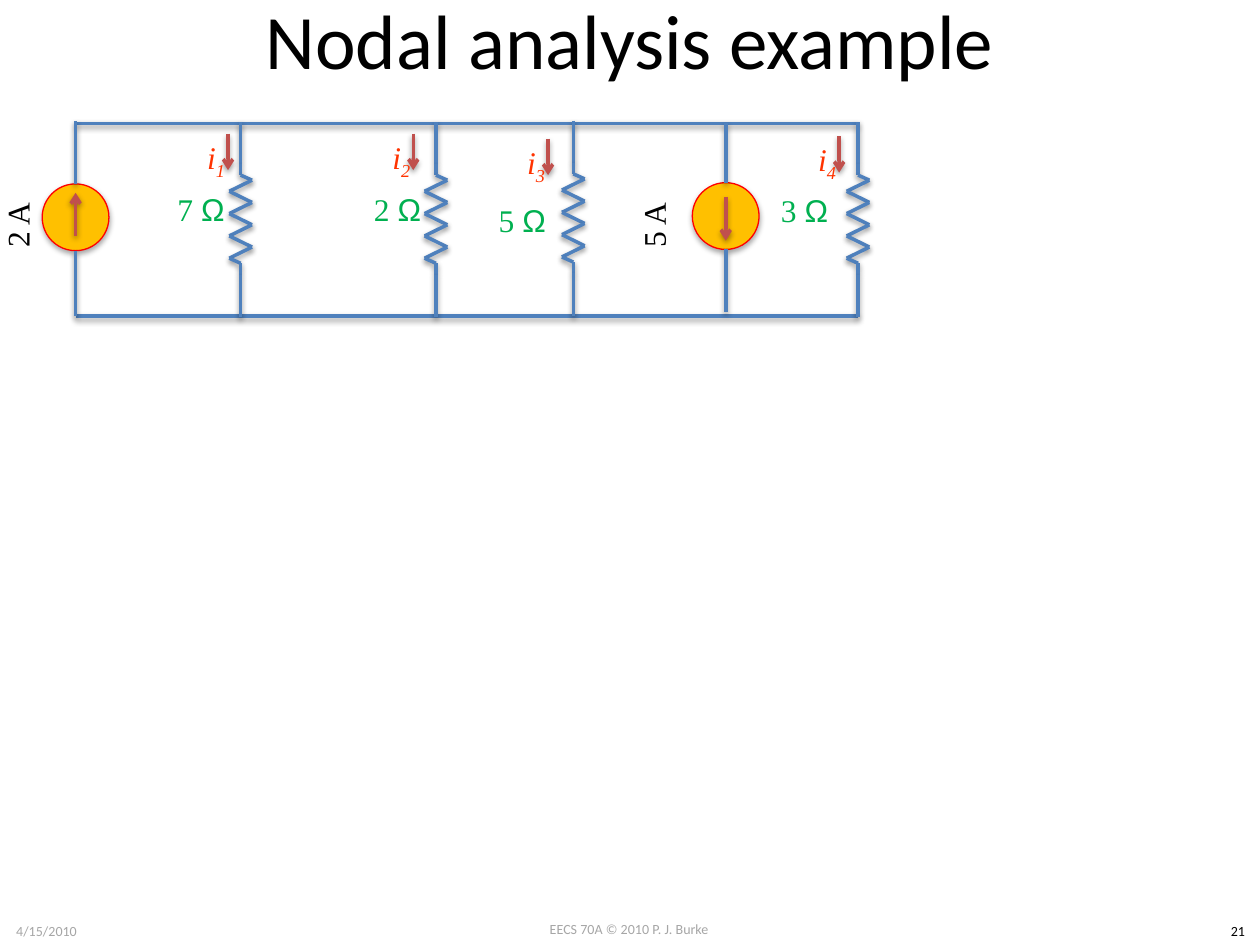
"""Build a slide with a five-branch circuit for nodal analysis."""
from itertools import pairwise

from lxml import etree
from pptx import Presentation
from pptx.dml.color import RGBColor
from pptx.enum.shapes import MSO_CONNECTOR, MSO_SHAPE
from pptx.enum.text import MSO_ANCHOR, PP_ALIGN
from pptx.oxml import parse_xml
from pptx.oxml.ns import nsdecls, qn
from pptx.util import Inches, Pt

COLORS = {
    "black": "000000", "gray": "A6A6A6", "wire": "4F81BD", "arrow": "C0504D",
    "ohm": "00B050", "current": "FF3300", "fill": "FFC000", "edge": "FF0000",
}
TITLE = ("Nodal analysis example", (0.5, -0.17, 9, 0.95))
FOOTERS = [
    ("EECS 70A © 2010 P. J. Burke", (3.83, 7.26, 2.33, 0.24), "gray"),
    ("4/15/2010", (0, 7.27, 0.74, 0.24), "gray"),
    ("21", (9.65, 7.27, 0.35, 0.24), "black"),
]
RESISTORS = [
    {"x": 1.91, "top": 0.97, "ohms": "7 ", "label": (1, 1.29), "arrow": (1.81, 1.06)},
    {"x": 3.46, "top": 0.97, "ohms": "2 ", "label": (2.56, 1.29), "arrow": (3.28, 1.06)},
    {"x": 4.55, "top": 0.96, "ohms": "5 ", "label": (3.55, 1.38), "arrow": (4.35, 1.1)},
    {"x": 6.81, "top": 0.97, "ohms": "3 ", "label": (5.79, 1.3), "arrow": (6.66, 1.08)},
]
SOURCES = [
    {"x": 0.6, "mid": 1.725, "amps": "2 A", "left": -0.46,
     "arrow": (1.87, 1.53), "ends": (0.96, 2.51)},
    {"x": 5.76, "mid": 1.715, "amps": "5 A", "left": 4.59,
     "arrow": (1.56, 1.91), "ends": (0.98, 2.48)},
]
RAILS = [((6.81, 0.98), (0.6, 0.98)), ((0.6, 2.51), (6.81, 2.51))]
ROUND = 0.53
ZIG = [(0.09 * (-1) ** k, 0.46 + 0.0885 * k) for k in range(8)]
COIL = [(0, 0), (0, 0.33), (0, 0.42), *ZIG, (0, 1.12), (0, 1.21), (0, 1.55)]

deck = Presentation()
deck.slide_width, deck.slide_height = Inches(10), Inches(7.5)
slide = deck.slides.add_slide(deck.slide_layouts[6])


def tint(name):
    return RGBColor.from_string(COLORS[name])


def write(text, box, size=18, font="Times New Roman", color="black", italic=False,
          turn=0, anchor=MSO_ANCHOR.MIDDLE, end="", endfont=None, sub=False, home=slide):
    area = home.shapes.add_textbox(*map(Inches, box))
    area.rotation = turn
    frame = area.text_frame
    frame.word_wrap = True
    frame.vertical_anchor = anchor
    line = frame.paragraphs[0]
    line.alignment = PP_ALIGN.CENTER
    for part, face in ((text, font), (end, endfont or font)):
        if part:
            run = line.add_run()
            run.text = part
            run.font.size, run.font.name = Pt(size), face
            run.font.italic = italic
            run.font.color.rgb = tint(color)
    if sub:
        run.font._element.set("baseline", "-25000")


def shade(shape, alpha=38000, dist=20000):
    shape._element.spPr.append(parse_xml(
        f'<a:effectLst {nsdecls("a")}><a:outerShdw blurRad="40000" dist="{dist}" '
        f'dir="5400000" rotWithShape="0"><a:srgbClr val="{COLORS["black"]}">'
        f'<a:alpha val="{alpha}"/></a:srgbClr></a:outerShdw></a:effectLst>'))


def draw(start, stop, color="wire", arrow=False, home=slide):
    wire = home.shapes.add_connector(
        MSO_CONNECTOR.STRAIGHT, *map(Inches, (*start, *stop)))
    wire.line.width = Pt(2)
    wire.line.color.rgb = tint(color)
    if arrow:
        etree.SubElement(wire.line._get_or_add_ln(), qn("a:tailEnd"), type="arrow")
    shade(wire)


def resist(x, top, ohms, label, arrow, index):
    coil = slide.shapes.add_group_shape()
    for start, stop in pairwise((x + dx, top + dy) for dx, dy in COIL):
        draw(start, stop, home=coil)
    write(ohms, (*label, 1.19, 0.73), color="ohm", end="Ω", endfont="Arial")
    left, high = arrow
    flow = slide.shapes.add_group_shape()
    draw(arrow, (left, high + 0.29), color="arrow", arrow=True, home=flow)
    write("i", (left - 0.48, high - 0.1, 0.77, 0.61), color="current", italic=True,
          end=str(index), sub=True, home=flow)


def supply(x, mid, amps, left, arrow, ends):
    write(amps, (left, 1.42, 1.19, 0.73), turn=270)
    group = slide.shapes.add_group_shape()
    half = ROUND / 2
    disc = group.shapes.add_shape(
        MSO_SHAPE.OVAL, *map(Inches, (x - half, mid - half, ROUND, ROUND)))
    disc.fill.solid()
    disc.fill.fore_color.rgb = tint("fill")
    disc.line.color.rgb = tint("edge")
    disc.line.width = Pt(0.75)
    shade(disc, alpha=35000, dist=23000)
    draw((x, arrow[0]), (x, arrow[1]), color="arrow", arrow=True, home=group)
    draw((x, mid - half), (x, ends[0]), home=group)
    draw((x, mid + half), (x, ends[1]), home=group)


for text, box, color in FOOTERS:
    write(text, box, size=8, font="Calibri", color=color, anchor=MSO_ANCHOR.TOP)
write(*TITLE, size=44, font="Calibri")
for start, stop in RAILS:
    draw(start, stop)
for index, item in enumerate(RESISTORS, 1):
    resist(**item, index=index)
for item in SOURCES:
    supply(**item)

deck.save("out.pptx")
